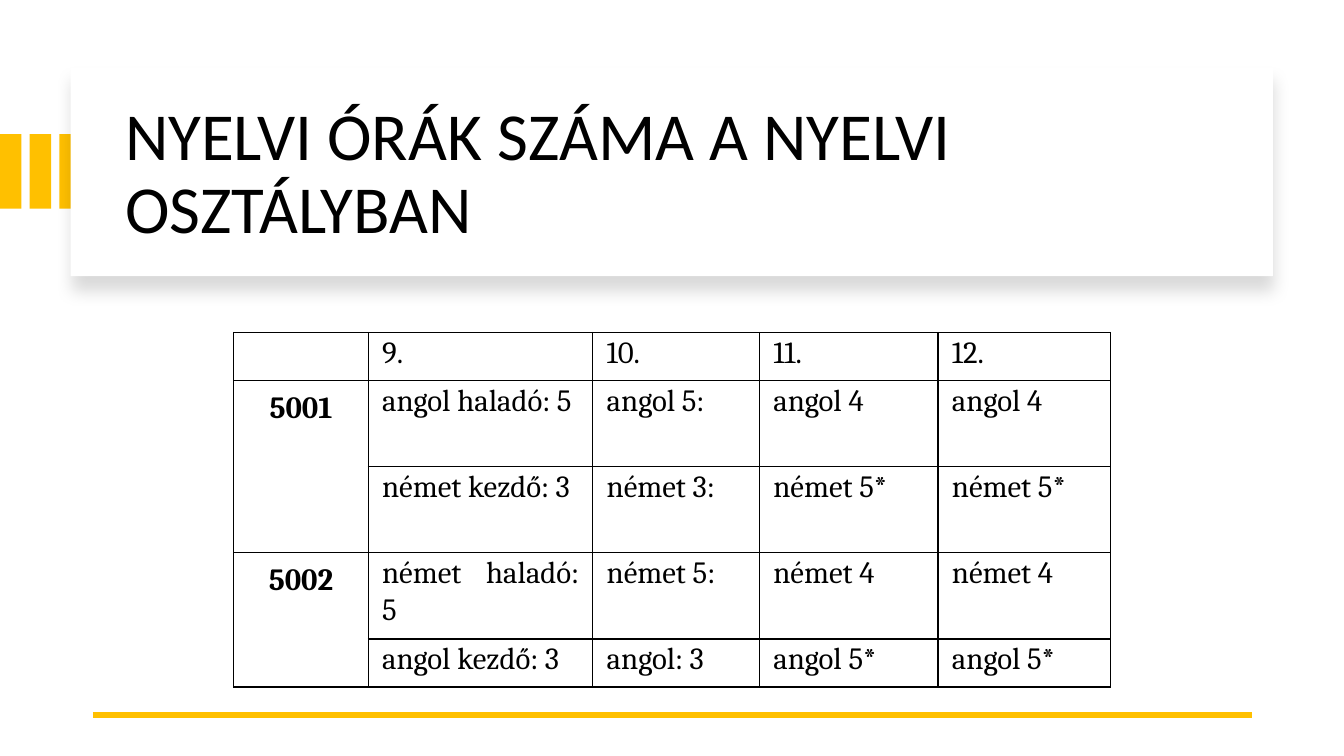
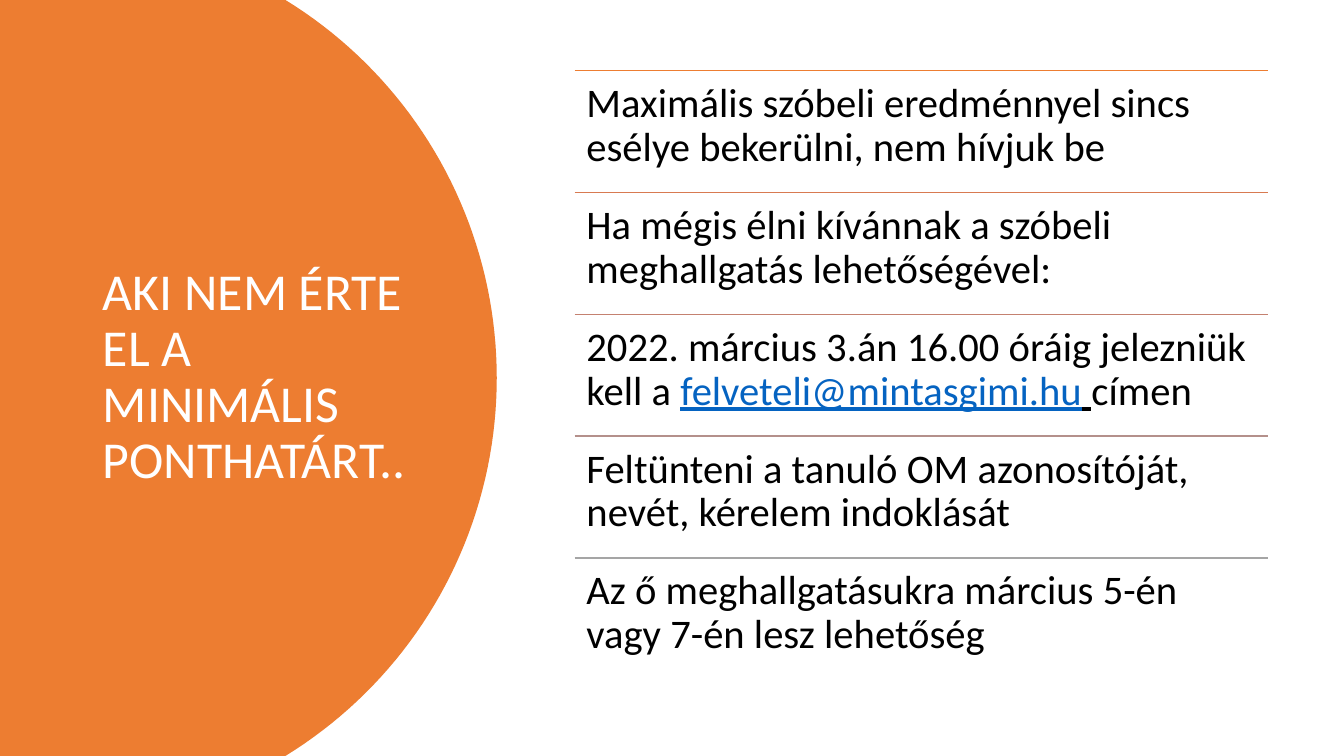
import math

import lxml.etree
import pptx
import pptx.dml.color
import pptx.enum.shapes
import pptx.enum.text
import pptx.oxml.ns
import pptx.util

Cm, Pt = pptx.util.Cm, pptx.util.Pt
ALIGN = pptx.enum.text.PP_ALIGN
ANCHOR = pptx.enum.text.MSO_ANCHOR
qn = pptx.oxml.ns.qn

WIDTH, HEIGHT = 33.87, 19.05
BLACK, WHITE = "000000", "FFFFFF"
YELLOW, ORANGE, LINK = "FFC000", "ED7D31", "0563C1"
BODY_FONT, TABLE_FONT = "Calibri", "Cambria"

COLUMNS = [3.39, 5.66, 4.2, 4.5, 4.34]
ROWS = [1.21, 2.17, 2.17, 2.17, 1.21]
LESSONS = [
    ["", "9.", "10.", "11.", "12."],
    ["5001", "angol haladó: 5", "angol 5:", "angol 4", "angol 4"],
    ["", "német kezdő: 3", "német 3:", "német 5*", "német 5*"],
    ["5002", "német haladó: 5", "német 5:", "német 4", "német 4"],
    ["", "angol kezdő: 3", "angol: 3", "angol 5*", "angol 5*"],
]

# Each step: colour of the rule above it, then its runs (text, format)
STEPS = [
    (ORANGE, [("Maximális szóbeli eredménnyel sincs esélye bekerülni, nem hívjuk be", {})]),
    ("D87A51", [("Ha mégis élni kívánnak a szóbeli meghallgatás lehetőségével:", {})]),
    ("C48170", [
        ("2022. március 3.án 16.00 óráig jelezniük kell a ", {}),
        ("felveteli@mintasgimi.hu", {"color": LINK, "underline": True}),
        (" ", {"underline": True}),
        ("címen", {}),
    ]),
    ("B4908B", [("Feltünteni a tanuló OM azonosítóját, nevét, kérelem indoklását", {})]),
    ("A5A5A5", [("Az ő meghallgatásukra március 5-én vagy 7-én lesz lehetőség", {})]),
]


def rgb(value):
    return pptx.dml.color.RGBColor.from_string(value)


def assign(obj, **values):
    for name, value in values.items():
        setattr(obj, name, value)


def add_run(p, text, size, color=BLACK, font=BODY_FONT, **extra):
    r = p.add_run()
    r.text = text
    assign(r.font, size=Pt(size), name=font, **extra)
    r.font.color.rgb = rgb(color)


def set_margins(target, horizontal, vertical, bottom=None):
    assign(target, margin_left=Cm(horizontal), margin_right=Cm(horizontal),
           margin_top=Cm(vertical),
           margin_bottom=Cm(vertical if bottom is None else bottom))


def set_title(s, text, box, size, color):
    sp = s.shapes.title
    assign(sp, **dict(zip(("left", "top", "width", "height"), map(Cm, box))))
    tf = sp.text_frame
    assign(tf, word_wrap=True, vertical_anchor=ANCHOR.MIDDLE,
           auto_size=pptx.enum.text.MSO_AUTO_SIZE.NONE)
    p = tf.paragraphs[0]
    assign(p, alignment=ALIGN.LEFT, line_spacing=0.9)
    add_run(p, text, size, color)


def paint(sp, color):
    """Give a shape a plain fill with no outline or shadow."""
    sp.fill.solid()
    sp.fill.fore_color.rgb = rgb(color)
    sp.line.fill.background()
    sp.shadow.inherit = False


def add_rect(s, x, y, w, h, color):
    sp = s.shapes.add_shape(pptx.enum.shapes.MSO_SHAPE.RECTANGLE,
                            Cm(x), Cm(y), Cm(w), Cm(h))
    paint(sp, color)
    return sp


def add_shadow(sp):
    """Cast a soft shadow straight down."""
    effects = sp.element.spPr.find(qn("a:effectLst"))
    shadow = lxml.etree.SubElement(
        effects, qn("a:outerShdw"), blurRad=str(Pt(11)), dist=str(Pt(10)),
        dir="5400000", algn="t", rotWithShape="0")
    color = lxml.etree.SubElement(shadow, qn("a:srgbClr"), val=BLACK)
    lxml.etree.SubElement(color, qn("a:alpha"), val="15000")


def add_rule(s, x, y, w, color, weight):
    line = s.shapes.add_connector(pptx.enum.shapes.MSO_CONNECTOR.STRAIGHT,
                                  Cm(x), Cm(y), Cm(x + w), Cm(y))
    line.line.color.rgb = rgb(color)
    line.line.width = Pt(weight)
    lxml.etree.SubElement(line.element.spPr, qn("a:effectLst"))


def add_round_panel(s, right, radius, color):
    """Fill the left side of the slide up to a circular edge."""
    half = math.asin(HEIGHT / 2 / radius)
    steps = 80
    angles = [half * (2 * i / steps - 1) for i in range(steps + 1)]
    edge = [(Cm(right - radius + radius * math.cos(a)),
             Cm(HEIGHT / 2 + radius * math.sin(a))) for a in angles]
    outline = s.shapes.build_freeform(0, 0)
    outline.add_line_segments(edge + [(0, Cm(HEIGHT))], close=True)
    paint(outline.convert_to_shape(), color)


def set_borders(cell, color, weight):
    tc_pr = cell._tc.get_or_add_tcPr()
    for i, side in enumerate("LRTB"):
        ln = lxml.etree.Element(qn("a:ln" + side), w=str(Pt(weight)))
        fill = lxml.etree.SubElement(ln, qn("a:solidFill"))
        lxml.etree.SubElement(fill, qn("a:srgbClr"), val=color)
        tc_pr.insert(i, ln)


def fill_cell(cell, text, is_group):
    if is_group:
        set_margins(cell, 0.46, 0.23)
    else:
        set_margins(cell, 0.35, 0.05, 0)
    p = cell.text_frame.paragraphs[0]
    assign(p, alignment=ALIGN.CENTER if is_group else ALIGN.JUSTIFY,
           line_spacing=1.03, space_after=Pt(5.3))
    add_run(p, text, 22, font=TABLE_FONT, bold=is_group)


def add_lesson_table(s, x, y):
    table = s.shapes.add_table(len(ROWS), len(COLUMNS), Cm(x), Cm(y),
                               Cm(sum(COLUMNS)), Cm(sum(ROWS))).table
    assign(table, first_row=False, horz_banding=False)
    for column, width in zip(table.columns, COLUMNS):
        column.width = Cm(width)
    for row, height in zip(table.rows, ROWS):
        row.height = Cm(height)
    for top in (1, 3):
        table.cell(top, 0).merge(table.cell(top + 1, 0))
    for i, texts in enumerate(LESSONS):
        for j, text in enumerate(texts):
            cell = table.cell(i, j)
            cell.fill.background()
            set_borders(cell, BLACK, 1)
            if text:
                fill_cell(cell, text, is_group=j == 0)


def add_step(s, x, y, w, h, color, runs):
    add_rule(s, x, y, w, color, 1)
    tf = s.shapes.add_textbox(Cm(x), Cm(y), Cm(w), Cm(h)).text_frame
    tf.word_wrap = True
    set_margins(tf, 0.3, 0.3)
    p = tf.paragraphs[0]
    p.line_spacing = 0.9
    for text, values in runs:
        add_run(p, text, 29, **values)


def build_lessons(s):
    for i in range(3):
        add_rect(s, 0.75 * i, 3.38, 0.54, 1.88, YELLOW)
    add_shadow(add_rect(s, 1.78, 1.7, 30.3, 5.26, WHITE))
    # The title placeholder comes first in the tree; lift it above the card
    s.shapes._spTree.append(s.shapes.title.element)
    set_title(s, "NYELVI ÓRÁK SZÁMA A NYELVI OSZTÁLYBAN",
              (2.9, 2.26, 28.27, 4.32), 48, BLACK)
    add_rule(s, 2.34, 18.01, 29.21, YELLOW, 4.5)
    add_lesson_table(s, 5.89, 8.38)


def build_steps(s):
    add_round_panel(s, 12.52, 11.18, ORANGE)
    s.shapes._spTree.append(s.shapes.title.element)
    set_title(s, "AKI NEM ÉRTE EL A MINIMÁLIS PONTHATÁRT..",
              (2.34, 1.78, 8.2, 15.47), 37, WHITE)
    pitch = 3.07
    for i, (color, runs) in enumerate(STEPS):
        add_step(s, 14.48, 1.78 + i * pitch, 17.48, pitch, color, runs)


def main():
    prs = pptx.Presentation()
    assign(prs, slide_width=Cm(WIDTH), slide_height=Cm(HEIGHT))
    for build in (build_lessons, build_steps):
        build(prs.slides.add_slide(prs.slide_layouts.get_by_name("Title Only")))
    prs.save("out.pptx")


if __name__ == "__main__":
    main()
